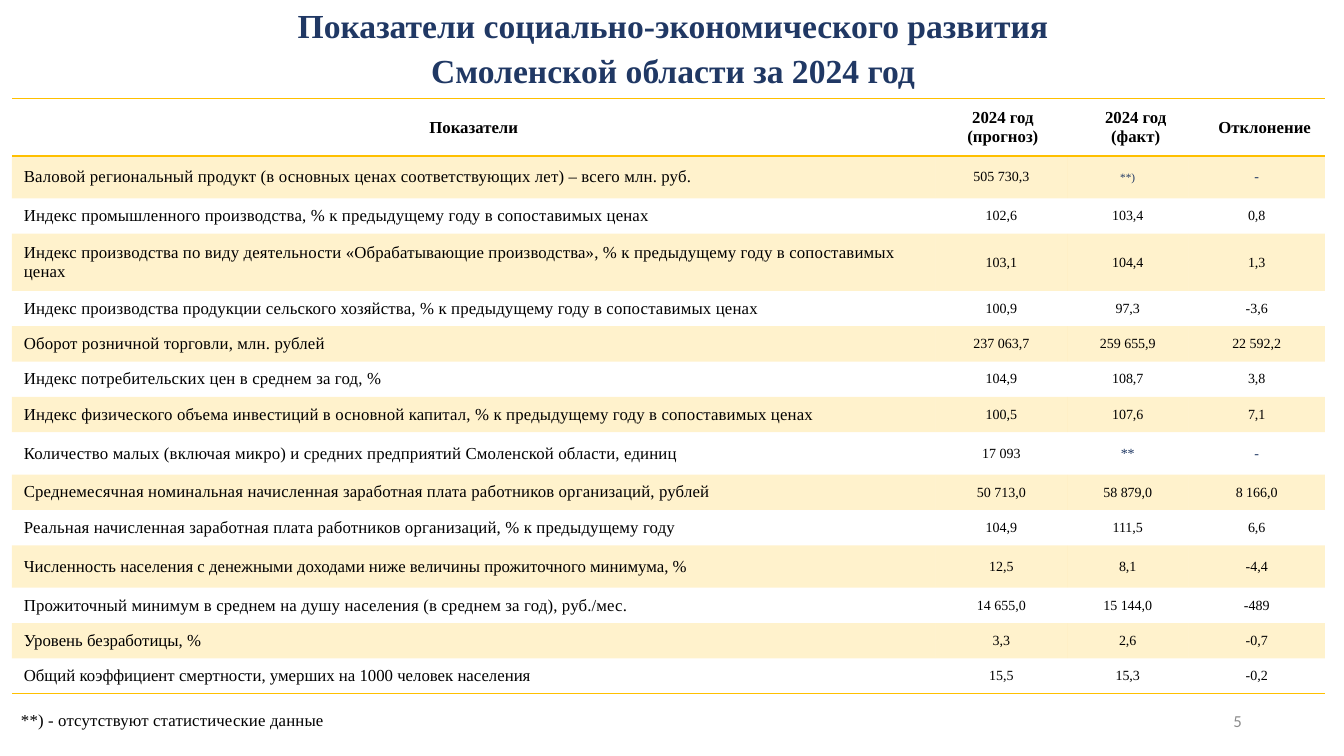
from lxml import etree
from pptx import Presentation
from pptx.dml.color import RGBColor
from pptx.enum.text import MSO_ANCHOR, MSO_AUTO_SIZE, PP_ALIGN
from pptx.oxml.ns import qn
from pptx.util import Cm, Pt

TITLE = ["Показатели социально-экономического развития", "Смоленской области за 2024 год"]
HEADS = [
    (["Показатели"], 0),
    (["2024 год", "(прогноз)"], 0.08),
    (["2024 год (факт)"], 0.4),
    (["Отклонение"], 0.4),
]
ROWS = [
    ("Валовой региональный продукт (в основных ценах соответствующих лет) – всего млн. руб.",
     "505 730,3", "**)", "-"),
    ("Индекс промышленного производства, % к предыдущему году в сопоставимых ценах",
     "102,6", "103,4", "0,8"),
    ("Индекс производства по виду деятельности «Обрабатывающие производства», "
     "% к предыдущему году в сопоставимых ценах", "103,1", "104,4", "1,3"),
    ("Индекс производства продукции сельского хозяйства, "
     "% к предыдущему году в сопоставимых ценах", "100,9", "97,3", "-3,6"),
    ("Оборот розничной торговли, млн. рублей", "237 063,7", "259 655,9", "22 592,2"),
    ("Индекс потребительских цен в среднем за год, %", "104,9", "108,7", "3,8"),
    ("Индекс физического объема инвестиций в основной капитал, "
     "% к предыдущему году в сопоставимых ценах", "100,5", "107,6", "7,1"),
    ("Количество малых (включая микро) и средних предприятий Смоленской области, единиц",
     "17 093", "**", "-"),
    ("Среднемесячная номинальная начисленная заработная плата работников организаций, рублей",
     "50 713,0", "58 879,0", "8 166,0"),
    ("Реальная начисленная заработная плата работников организаций, % к предыдущему году",
     "104,9", "111,5", "6,6"),
    ("Численность населения с денежными доходами ниже величины прожиточного минимума, %",
     "12,5", "8,1", "-4,4"),
    ("Прожиточный минимум в среднем на душу населения (в среднем за год), руб./мес.",
     "14 655,0", "15 144,0", "-489"),
    ("Уровень безработицы, %", "3,3", "2,6", "-0,7"),
    ("Общий коэффициент смертности, умерших на 1000 человек населения", "15,5", "15,3", "-0,2"),
]
NOTE = "**) - отсутствуют статистические данные"
PAGE = "5"

COLORS = {"navy": "203864", "black": "000000", "gold": "FFC000", "gray": "8C8C8C"}
SERIF, SANS = "Times New Roman", "Calibri"
WIDTHS = [23.28, 3.31, 3.06, 3.44]
LOW, MID, HIGH = 0.89, 1.07, 1.44
TALL = {0: HIGH, 1: MID, 3: HIGH, 8: MID, 11: MID}
TIGHT = {11, 13, 14}
PLAIN = "{2D5ABB26-0587-4C30-8999-92F81FD0307C}"
CENTER, RIGHT, LEFT = PP_ALIGN.CENTER, PP_ALIGN.RIGHT, PP_ALIGN.LEFT
MIDDLE = MSO_ANCHOR.MIDDLE
GROW = MSO_AUTO_SIZE.SHAPE_TO_FIT_TEXT


def write(frame, lines, size, color="black", align=LEFT, bold=False, face=SERIF,
          indent=0, gap=0, track=0):
    for i, line in enumerate(lines):
        para = frame.paragraphs[0] if i == 0 else frame.add_paragraph()
        para.alignment = align
        if indent:
            props = para._p.get_or_add_pPr()
            props.set("marL", str(Cm(indent)))
            props.set("indent", "0")
        if gap and i:
            para.space_before = Pt(gap)
        run = para.add_run()
        run.text = line
        run.font.size = Pt(size)
        run.font.name = face
        run.font.bold = bold
        run.font.color.rgb = RGBColor.from_string(COLORS[color])
        if track:
            run.font._element.set("spc", str(track))


def add_box(slide, left, top, width, height, wrap=True):
    box = slide.shapes.add_textbox(Cm(left), Cm(top), Cm(width), Cm(height))
    box.text_frame.word_wrap = wrap
    return box.text_frame


def paint(cell):
    cell.fill.solid()
    cell.fill.fore_color.rgb = RGBColor.from_string(COLORS["gold"])
    tint = cell._tc.tcPr.find(".//" + qn("a:srgbClr"))
    etree.SubElement(tint, qn("a:alpha")).set("val", "20000")


def rule(cell, sides):
    props = cell._tc.get_or_add_tcPr()
    for i, side in enumerate(sides):
        line = etree.Element(qn("a:" + side), w=str(Pt(1)))
        fill = etree.SubElement(line, qn("a:solidFill"))
        etree.SubElement(fill, qn("a:srgbClr")).set("val", COLORS["gold"])
        props.insert(i, line)


def add_grid(slide):
    count = len(ROWS) + 1
    highs = [TALL.get(r, LOW) for r in range(count)]
    shape = slide.shapes.add_table(count, len(WIDTHS), Cm(0.3), Cm(2.49),
                                   Cm(sum(WIDTHS)), Cm(sum(highs)))
    grid = shape.table
    grid._tbl.tblPr.find(qn("a:tableStyleId")).text = PLAIN
    for col, width in zip(grid.columns, WIDTHS):
        col.width = Cm(width)
    for row, high in zip(grid.rows, highs):
        row.height = Cm(high)
    for r in range(count):
        for c in range(len(WIDTHS)):
            cell = grid.cell(r, c)
            cell.vertical_anchor = MIDDLE
            cell.margin_left = cell.margin_right = Cm(0.3)
            cell.margin_top = cell.margin_bottom = Cm(0.15)
            frame = cell.text_frame
            if r == 0:
                lines, indent = HEADS[c]
                write(frame, lines, 12, align=CENTER, bold=True, indent=indent)
            elif c == 0:
                write(frame, [ROWS[r - 1][0]], 12, track=0 if r in TIGHT else 10)
            else:
                value = ROWS[r - 1][c]
                blank = value == "-" or value.startswith("*")
                write(frame, [value], 8 if value == "**)" else 10,
                      "navy" if blank else "black", CENTER)
            if r % 2:
                paint(cell)
            else:
                cell.fill.background()
            if r == 0:
                rule(cell, ["lnT", "lnB"])
            elif r == count - 1:
                rule(cell, ["lnB"])


def main():
    deck = Presentation()
    deck.slide_width, deck.slide_height = Cm(33.87), Cm(19.05)
    slide = deck.slides.add_slide(deck.slide_layouts[6])

    title = add_box(slide, 0, 0, 33.87, 2.31)
    title.margin_left = title.margin_right = title.margin_bottom = 0
    title.margin_top = Cm(0.13)
    title.auto_size = GROW
    write(title, TITLE, 24, "navy", CENTER, True, indent=0.05, gap=3.5)

    add_grid(slide)

    page = add_box(slide, 23.93, 17.65, 7.62, 1.02)
    page.vertical_anchor = MIDDLE
    write(page, [PAGE], 12, "gray", RIGHT, face=SANS)

    note = add_box(slide, 0.28, 17.75, 8.23, 0.77, wrap=False)
    note.auto_size = GROW
    write(note, [NOTE], 12, track=10)

    deck.save("out.pptx")


if __name__ == "__main__":
    main()
